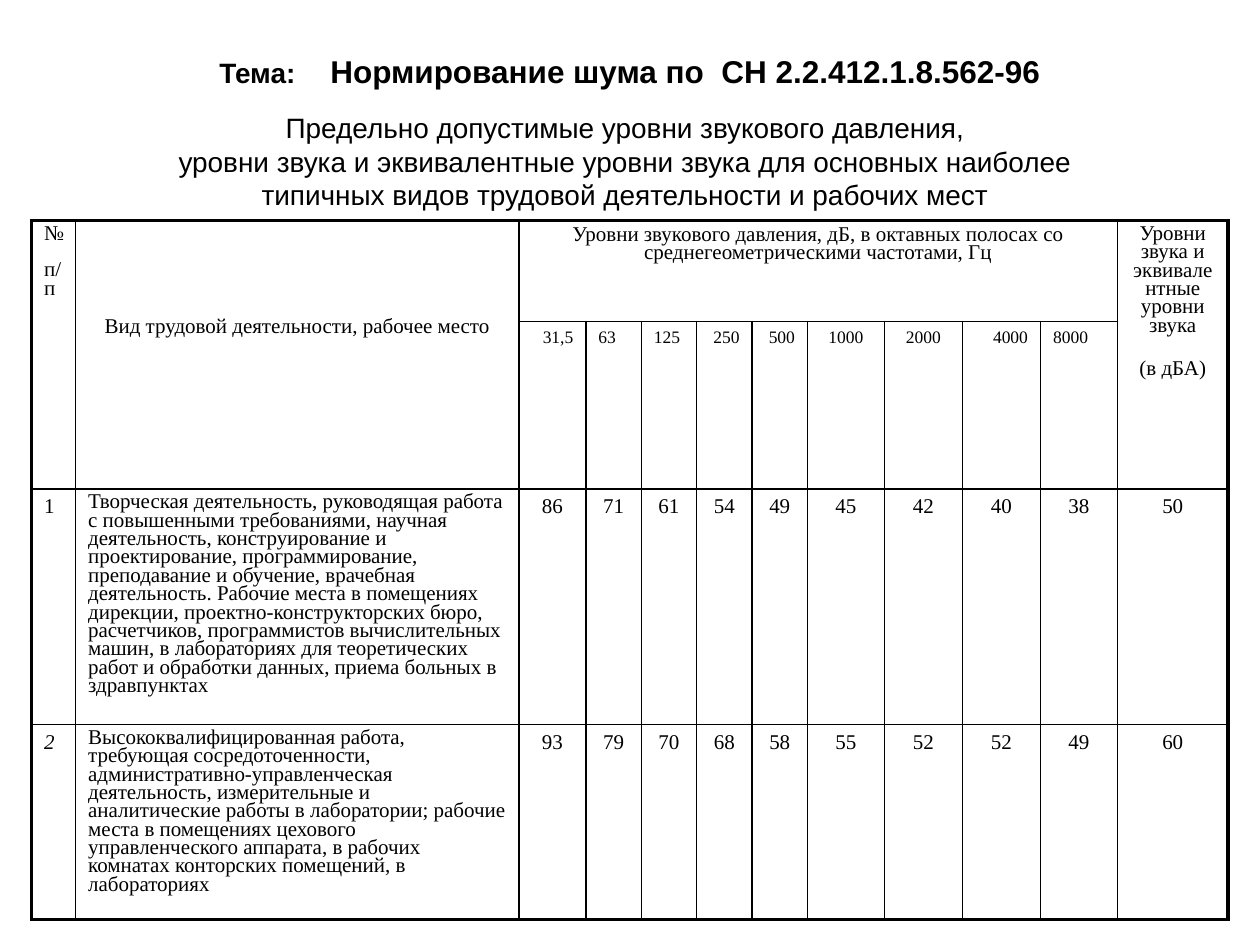
from dataclasses import dataclass
from typing import Optional

from lxml import etree
from pptx import Presentation
from pptx.dml.color import RGBColor
from pptx.enum.text import MSO_ANCHOR, PP_ALIGN
from pptx.oxml.ns import qn
from pptx.util import Inches, Pt

LEFT, CENTER, RIGHT = PP_ALIGN.LEFT, PP_ALIGN.CENTER, PP_ALIGN.RIGHT
MIDDLE, TOP = MSO_ANCHOR.MIDDLE, MSO_ANCHOR.TOP


@dataclass(frozen=True)
class Theme:
    ink: str = "000000"
    paper: str = "FFFFFF"
    heading_font: str = "Arial"
    table_font: str = "Times New Roman"
    title_size: float = 18
    subtitle_size: float = 16
    cell_size: float = 12
    band_size: float = 10
    thin: float = 1
    thick: float = 2.25


@dataclass(frozen=True)
class Line:
    text: str
    align: PP_ALIGN = CENTER
    spacing: Optional[float] = None
    before: float = 0
    size: float = Theme.cell_size
    italic: bool = False


@dataclass(frozen=True)
class Activity:
    number: Line
    name: str
    levels: tuple[int, ...]


THEME = Theme()
COLUMNS = (0.35, 3.52, 0.53, *[0.44] * 4, 0.61, 0.62, 0.62, 0.61, 0.88)
ROWS = (0.8, 1.2, 1.87, 1.55)
FIRST_BAND = 2
LAST_COL = len(COLUMNS) - 1
SUBTITLE = (
    "Предельно допустимые уровни звукового давления,",
    "уровни звука и эквивалентные уровни звука для основных наиболее",
    "типичных видов трудовой деятельности и рабочих мест",
)
BANDS = (
    ("31,5", RIGHT), ("63", LEFT), ("125", LEFT), ("250", RIGHT), ("500", RIGHT),
    ("1000", CENTER), ("2000", CENTER), ("4000", RIGHT), ("8000", LEFT),
)
SOUND_LEVEL = (
    Line("Уровни звука и", spacing=10.5),
    Line("эквивалентные", spacing=10.5),
    Line("уровни звука", spacing=10.5),
    Line("(в дБА)", before=11.2),
)
ACTIVITIES = (
    Activity(
        Line("1", LEFT),
        "Творческая деятельность, руководящая работа с повышенными требованиями, "
        "научная деятельность, конструирование и проектирование, программирование, "
        "преподавание и обучение, врачебная деятельность. Рабочие места в помещениях "
        "дирекции, проектно-конструкторских бюро, расчетчиков, программистов "
        "вычислительных машин, в лабораториях для теоретических работ и обработки "
        "данных, приема больных в здравпунктах",
        (86, 71, 61, 54, 49, 45, 42, 40, 38, 50),
    ),
    Activity(
        Line("2", LEFT, italic=True),
        "Высококвалифицированная работа, требующая сосредоточенности, "
        "административно-управленческая деятельность, измерительные и аналитические "
        "работы в лаборатории; рабочие места в помещениях цехового управленческого "
        "аппарата, в рабочих комнатах конторских помещений, в лабораториях",
        (93, 79, 70, 68, 58, 55, 52, 52, 49, 60),
    ),
)


def add_run(p, text: str, font: str, size: float, bold=False, italic=False):
    r = p.add_run()
    r.text = text
    r.font.name, r.font.size = font, Pt(size)
    r.font.bold, r.font.italic = bold, italic
    r.font.color.rgb = RGBColor.from_string(THEME.ink)
    return r


def add_text_box(s, left: float, top: float, width: float, height: float, anchor):
    tf = s.shapes.add_textbox(
        Inches(left), Inches(top), Inches(width), Inches(height)
    ).text_frame
    tf.word_wrap = True
    tf.vertical_anchor = anchor
    return tf


def add_title(s) -> None:
    p = add_text_box(s, 0.5, 0.25, 9, 0.62, MIDDLE).paragraphs[0]
    p.alignment = CENTER
    add_run(p, "Тема:", THEME.heading_font, THEME.subtitle_size, bold=True)
    gap = add_run(p, " ", THEME.heading_font, THEME.title_size, bold=True)
    gap.font._element.set("spc", "1500")
    add_run(p, "Нормирование шума по  СН 2.2.412.1.8.562-96",
            THEME.heading_font, THEME.title_size, bold=True)


def add_subtitle(s) -> None:
    tf = add_text_box(s, 0.67, 0.83, 8.58, 0.9, TOP)
    for i, text in enumerate(SUBTITLE):
        p = tf.add_paragraph() if i else tf.paragraphs[0]
        p.alignment = CENTER
        add_run(p, text, THEME.heading_font, THEME.subtitle_size)


def write_cell(cell, *lines: Line) -> None:
    tf = cell.text_frame
    for i, line in enumerate(lines):
        p = tf.add_paragraph() if i else tf.paragraphs[0]
        p.alignment = line.align
        p.space_before = Pt(line.before)
        if line.spacing:
            p.line_spacing = Pt(line.spacing)
        add_run(p, line.text, THEME.table_font, line.size, italic=line.italic)


def style_cell(cell, row: int, col: int) -> None:
    cell.fill.solid()
    cell.fill.fore_color.rgb = RGBColor.from_string(THEME.paper)
    outer = {
        "a:lnL": col == 0, "a:lnR": col == LAST_COL,
        "a:lnT": row == 0, "a:lnB": row == len(ROWS) - 1,
    }
    tc_pr = cell._tc.get_or_add_tcPr()
    for i, (side, is_outer) in enumerate(outer.items()):
        width = Pt(THEME.thick if is_outer else THEME.thin)
        ln = etree.Element(qn(side), w=str(int(width)))
        fill = etree.SubElement(ln, qn("a:solidFill"))
        etree.SubElement(fill, qn("a:srgbClr"), val=THEME.ink)
        tc_pr.insert(i, ln)


def add_noise_table(s) -> None:
    table = s.shapes.add_table(
        len(ROWS), len(COLUMNS), Inches(0.25), Inches(1.75),
        Inches(sum(COLUMNS)), Inches(sum(ROWS)),
    ).table
    table.first_row = table.horz_banding = False
    for column, width in zip(table.columns, COLUMNS):
        column.width = Inches(width)
    for row, height in zip(table.rows, ROWS):
        row.height = Inches(height)
    for r in range(len(ROWS)):
        for c in range(len(COLUMNS)):
            style_cell(table.cell(r, c), r, c)

    for c in (0, 1, LAST_COL):
        table.cell(0, c).merge(table.cell(1, c))
    table.cell(0, FIRST_BAND).merge(table.cell(0, LAST_COL - 1))

    write_cell(table.cell(0, 0), Line("№ п/п", LEFT, 10.4))
    table.cell(0, 1).margin_top = Inches(0.79)
    write_cell(table.cell(0, 1), Line("Вид трудовой деятельности, рабочее место", spacing=10.4))
    write_cell(table.cell(0, FIRST_BAND), Line(
        "Уровни звукового давления, дБ, в октавных полосах со "
        "среднегеометрическими частотами, Гц", spacing=10.8))
    write_cell(table.cell(0, LAST_COL), *SOUND_LEVEL)
    for c, (band, align) in enumerate(BANDS, FIRST_BAND):
        write_cell(table.cell(1, c), Line(band, align, size=THEME.band_size))
    for r, activity in enumerate(ACTIVITIES, 2):
        write_cell(table.cell(r, 0), activity.number)
        write_cell(table.cell(r, 1), Line(activity.name, LEFT, 10.5))
        for c, level in enumerate(activity.levels, FIRST_BAND):
            write_cell(table.cell(r, c), Line(str(level)))


def main() -> None:
    prs = Presentation()
    prs.slide_width, prs.slide_height = Inches(10), Inches(7.5)
    s = prs.slides.add_slide(prs.slide_layouts[6])
    add_title(s)
    add_subtitle(s)
    add_noise_table(s)
    prs.save("out.pptx")


if __name__ == "__main__":
    main()
